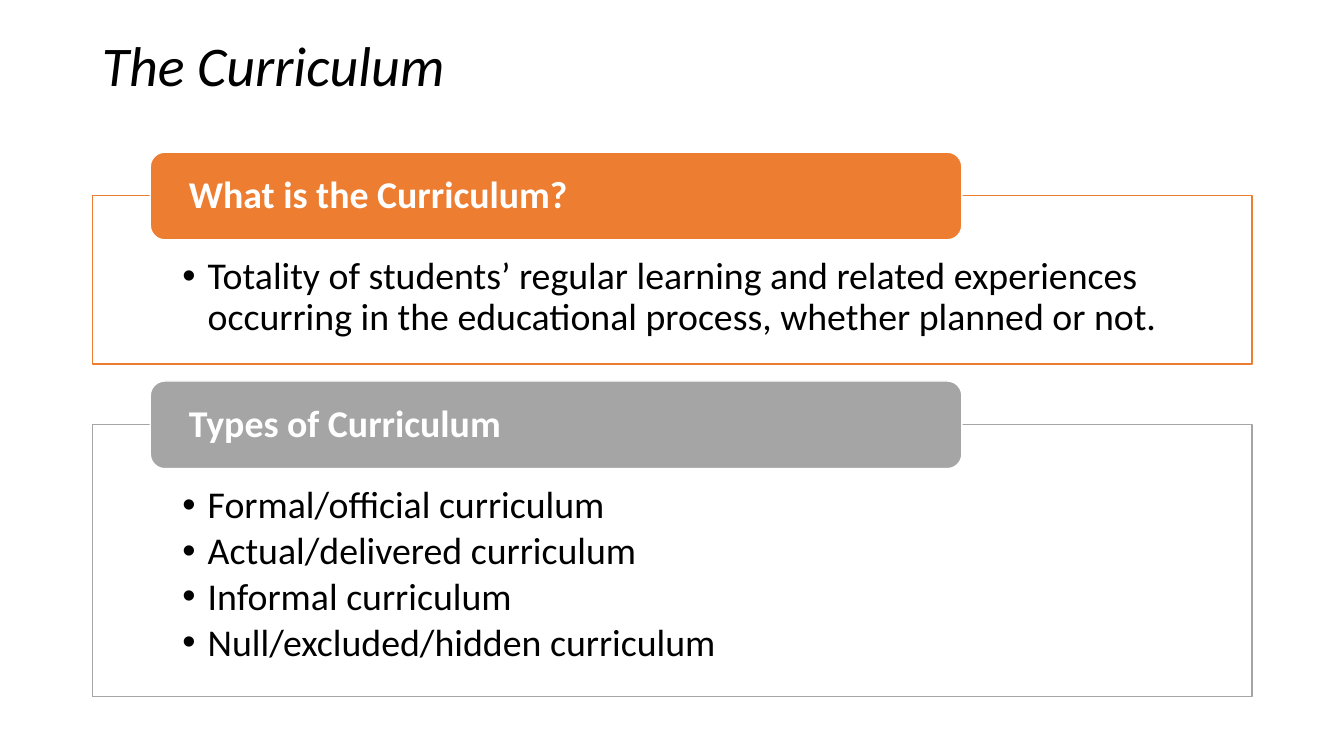
from lxml.etree import SubElement
from pptx import Presentation
from pptx.dml.color import RGBColor
from pptx.enum.shapes import MSO_SHAPE
from pptx.enum.text import MSO_ANCHOR, PP_ALIGN
from pptx.oxml.ns import qn
from pptx.util import Inches, Pt

COLORS = {"black": "000000", "white": "FFFFFF", "orange": "ED7D31", "gray": "A5A5A5"}
TOPICS = [
    ("What is the Curriculum?", "orange", 1.94, 1.67, [
        "Totality of students’ regular learning and related experiences "
        "occurring in the educational process, whether planned or not."]),
    ("Types of Curriculum", "gray", 4.21, 2.7, [
        "Formal/official curriculum",
        "Actual/delivered curriculum",
        "Informal curriculum",
        "Null/excluded/hidden curriculum"]),
]


def color(name):
    """Return the named colour."""
    return RGBColor.from_string(COLORS[name])


def style(para, size, ink, bold=False, italic=False):
    """Format a left-aligned paragraph."""
    para.alignment = PP_ALIGN.LEFT
    para.line_spacing = 0.9
    font = para.font
    font.name, font.size = "Calibri", Pt(size)
    font.bold, font.italic = bold, italic
    font.color.rgb = color(ink)


def add_bullet(para):
    """Give a paragraph a hanging round bullet."""
    props = para._p.get_or_add_pPr()
    props.set("marL", str(Inches(0.25)))
    props.set("indent", str(-Inches(0.25)))
    SubElement(props, qn("a:buFont"), typeface="Arial")
    SubElement(props, qn("a:buChar"), char="•")


def add_box(slide, kind, place, fill, line, insets, anchor):
    """Add a filled and outlined shape and return its text frame."""
    box = slide.shapes.add_shape(kind, *map(Inches, place))
    box.shadow.inherit = False
    box.fill.solid()
    box.fill.fore_color.rgb = color(fill)
    box.line.color.rgb = color(line)
    box.line.width = Pt(1)
    frame = box.text_frame
    frame.word_wrap = True
    frame.vertical_anchor = anchor
    side, top, bottom = map(Inches, insets)
    frame.margin_left = frame.margin_right = side
    frame.margin_top, frame.margin_bottom = top, bottom
    return frame


def add_topic(slide, label, hue, top, height, items):
    """Add a framed list with its heading tab across the top edge."""
    frame = add_box(slide, MSO_SHAPE.RECTANGLE, (0.92, top, 11.5, height),
                    "white", hue, (0.89, 0.61, 0.21), MSO_ANCHOR.TOP)
    for index, item in enumerate(items):
        para = frame.add_paragraph() if index else frame.paragraphs[0]
        para.text = item
        add_bullet(para)
        style(para, 27, "black")
        para.space_after = Pt(3.6)
    tab = add_box(slide, MSO_SHAPE.ROUNDED_RECTANGLE, (1.49, top - 0.43, 8.05, 0.87),
                  hue, "white", (0.34, 0, 0), MSO_ANCHOR.MIDDLE)
    tab.text = label
    style(tab.paragraphs[0], 27, "white", bold=True)


def set_title(slide, text):
    """Place and format the slide title."""
    title = slide.shapes.title
    title.left, title.top = Inches(0.91), Inches(0.28)
    title.width, title.height = Inches(11.5), Inches(0.8)
    title.text = text
    title.text_frame.vertical_anchor = MSO_ANCHOR.MIDDLE
    style(title.text_frame.paragraphs[0], 40, "black", italic=True)


def main():
    """Build and save the slide."""
    deck = Presentation()
    deck.slide_width, deck.slide_height = Inches(13.33), Inches(7.5)
    slide = deck.slides.add_slide(deck.slide_layouts[5])
    set_title(slide, "The Curriculum")
    for topic in TOPICS:
        add_topic(slide, *topic)
    deck.save("out.pptx")


if __name__ == "__main__":
    main()
